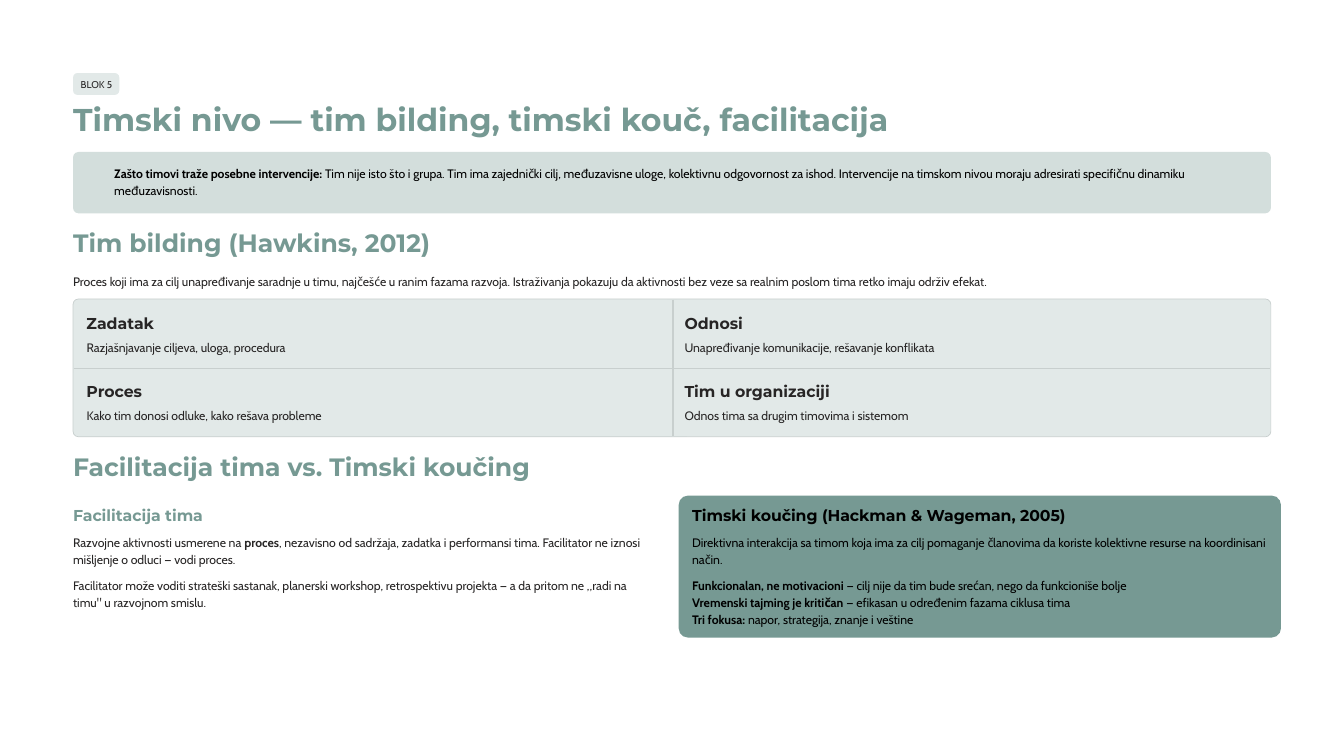
from lxml import etree
from pptx import Presentation
from pptx.dml.color import RGBColor
from pptx.enum import shapes
from pptx.oxml.ns import qn
from pptx.util import Inches, Pt

GREEN, PALE, MIST, RULE = "769993", "D3DEDC", "E2E9E8", "C8CFCE"
INK, BLACK, WHITE = "272525", "000000", "FFFFFF"

STYLES = {
    "tag": ("Cabin", 8.5, 11.5, False),
    "title": ("Montserrat", 27, 34, True),
    "section": ("Montserrat", 21.5, 27, True),
    "heading": ("Montserrat", 13.5, 17, True),
    "body": ("Cabin", 10.5, 14.5, None),
}

LEFT, WIDTH = 0.87, 14.26
GRID_LEFT, GRID_TOP = 0.88, 3.57
CELL_WIDTH, CELL_HEIGHT, CELL_PADDING = 7.12, 0.81, 0.15
COLUMN_WIDTH, CARD_LEFT, CARD_TEXT_WIDTH = 6.95, 8.24, 6.86

PANELS = [
    (LEFT, 0.87, 0.55, 0.26, 0.199, MIST, None),
    (LEFT, 1.81, WIDTH, 0.73, 0.088, PALE, None),
    (LEFT, 3.56, WIDTH, 1.64, 0.039, MIST, RULE),
    (8.08, 5.9, 7.17, 1.69, 0.065, GREEN, None),
]

TEXTS = [
    ("tag", 0.96, 0.92, 0.42, 0.17, INK, [["BLOK 5"]]),
    ("title", LEFT, 1.17, 9.82, 0.47, GREEN,
     [["Timski nivo — tim bilding, timski kouč, facilitacija"]]),
    ("body", 1.36, 1.95, 13.62, 0.41, BLACK,
     [["*Zašto timovi traže posebne intervencije:",
       " Tim nije isto što i grupa. Tim ima zajednički cilj, međuzavisne uloge, "
       "kolektivnu odgovornost za ishod. Intervencije na timskom nivou moraju "
       "adresirati specifičnu dinamiku međuzavisnosti."]]),
    ("section", LEFT, 2.69, 4.33, 0.38, GREEN, [["Tim bilding (Hawkins, 2012)"]]),
    ("body", LEFT, 3.24, WIDTH, 0.21, INK,
     [["Proces koji ima za cilj unapređivanje saradnje u timu, najčešće u ranim fazama "
       "razvoja. Istraživanja pokazuju da aktivnosti bez veze sa realnim poslom tima "
       "retko imaju održiv efekat."]]),
    ("section", LEFT, 5.36, 5.53, 0.38, GREEN, [["Facilitacija tima vs. Timski koučing"]]),
    ("heading", LEFT, 6.01, 1.9, 0.24, GREEN, [["Facilitacija tima"]]),
    ("body", LEFT, 6.35, COLUMN_WIDTH, 0.41, INK,
     [["Razvojne aktivnosti usmerene na ", "*proces",
       ", nezavisno od sadržaja, zadatka i performansi tima. Facilitator ne iznosi "
       "mišljenje o odluci — vodi proces."]]),
    ("body", LEFT, 6.86, COLUMN_WIDTH, 0.41, INK,
     [["Facilitator može voditi strateški sastanak, planerski workshop, retrospektivu "
       "projekta — a da pritom ne „radi na timu\" u razvojnom smislu."]]),
    ("heading", CARD_LEFT, 6.01, 4.52, 0.24, BLACK,
     [["Timski koučing (Hackman & Wageman, 2005)"]]),
    ("body", CARD_LEFT, 6.35, CARD_TEXT_WIDTH, 0.41, BLACK,
     [["Direktivna interakcija sa timom koja ima za cilj pomaganje članovima da koriste "
       "kolektivne resurse na koordinisani način."]]),
    ("body", CARD_LEFT, 6.86, CARD_TEXT_WIDTH, 0.69, BLACK,
     [["*Funkcionalan, ne motivacioni",
       " — cilj nije da tim bude srećan, nego da funkcioniše bolje"],
      ["*Vremenski tajming je kritičan", " — efikasan u određenim fazama ciklusa tima"],
      ["*Tri fokusa:", " napor, strategija, znanje i veštine"]]),
]

CELLS = [
    ("Zadatak", "Razjašnjavanje ciljeva, uloga, procedura"),
    ("Odnosi", "Unapređivanje komunikacije, rešavanje konflikata"),
    ("Proces", "Kako tim donosi odluke, kako rešava probleme"),
    ("Tim u organizaciji", "Odnos tima sa drugim timovima i sistemom"),
]


def color(value):
    return RGBColor.from_string(value)


def add_panel(slide, left, top, width, height, corner, fill, outline):
    shape = slide.shapes.add_shape(
        shapes.MSO_SHAPE.ROUNDED_RECTANGLE, *map(Inches, (left, top, width, height)))
    shape.adjustments[0] = corner
    shape.shadow.inherit = False
    shape.fill.solid()
    shape.fill.fore_color.rgb = color(fill)
    if outline:
        shape.line.color.rgb = color(outline)
        shape.line.width = Pt(0.6)
    else:
        shape.line.fill.background()


def add_rule(slide, *ends):
    rule = slide.shapes.add_connector(
        shapes.MSO_CONNECTOR.STRAIGHT, *map(Inches, ends))
    rule.line.color.rgb = color(RULE)
    rule.line.width = Pt(1.2)
    etree.SubElement(rule._element.spPr, qn("a:effectLst"))


def add_text(slide, style, left, top, width, height, ink, paragraphs):
    font_name, size, spacing, bold = STYLES[style]
    box = slide.shapes.add_textbox(*map(Inches, (left, top, width, height)))
    frame = box.text_frame
    frame.word_wrap = style == "body"
    frame.margin_left = frame.margin_right = frame.margin_top = frame.margin_bottom = 0
    for index, pieces in enumerate(paragraphs):
        paragraph = frame.add_paragraph() if index else frame.paragraphs[0]
        paragraph.line_spacing = Pt(spacing)
        paragraph.font.name = font_name
        paragraph.font.size = Pt(size)
        paragraph.font.bold = bold
        paragraph.font.color.rgb = color(ink)
        for piece in pieces:
            run = paragraph.add_run()
            run.text = piece.removeprefix("*")
            if piece.startswith("*"):
                run.font.bold = True


def add_cell(slide, row, column, heading, detail):
    left = GRID_LEFT + column * CELL_WIDTH
    top = GRID_TOP + row * CELL_HEIGHT
    add_panel(slide, left, top, CELL_WIDTH, CELL_HEIGHT, 0.079, MIST, None)
    if column:
        add_rule(slide, left + 0.01, top, left + 0.01, top + CELL_HEIGHT)
    if row:
        add_rule(slide, left, top + 0.01, left + CELL_WIDTH, top + 0.01)
    text_left, text_top = left + CELL_PADDING, top + CELL_PADDING
    text_width = CELL_WIDTH - 2 * CELL_PADDING
    add_text(slide, "heading", text_left, text_top, 1.9, 0.24, INK, [[heading]])
    add_text(slide, "body", text_left, text_top + 0.3, text_width, 0.21, INK, [[detail]])


def main():
    presentation = Presentation()
    presentation.slide_width, presentation.slide_height = Inches(16), Inches(9)
    slide = presentation.slides.add_slide(presentation.slide_layouts[6])
    slide.background.fill.solid()
    slide.background.fill.fore_color.rgb = color(WHITE)

    for panel in PANELS:
        add_panel(slide, *panel)
    for index, cell in enumerate(CELLS):
        add_cell(slide, *divmod(index, 2), *cell)
    for text in TEXTS:
        add_text(slide, *text)

    presentation.save("out.pptx")


if __name__ == "__main__":
    main()
